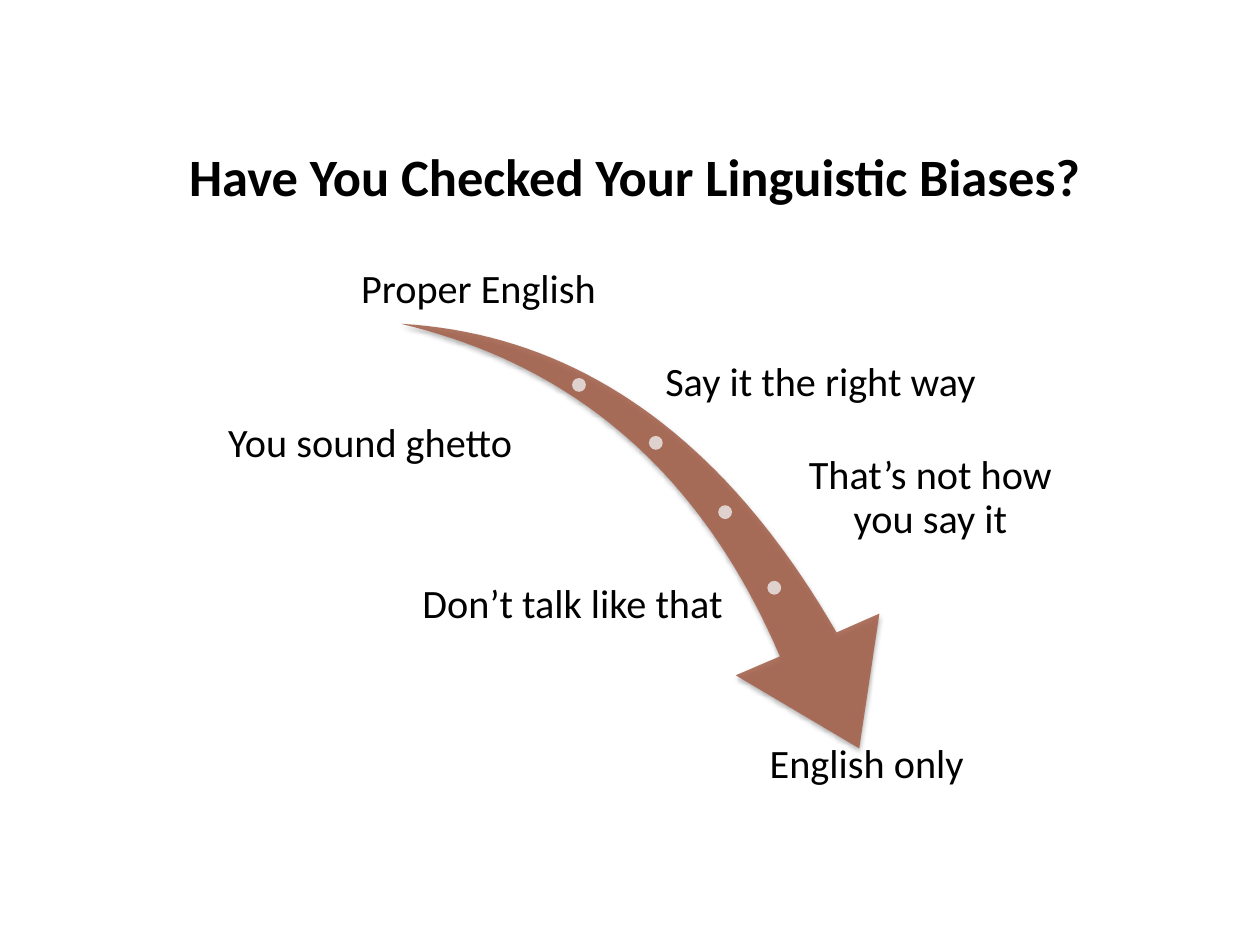
"""Build a slide with a curved arrow passing common remarks of linguistic bias."""
from lxml import etree
from pptx import Presentation, util as u
from pptx.dml.color import RGBColor
from pptx.enum import shapes, text
from pptx.oxml import ns, parse_xml

BLACK = RGBColor(0x00, 0x00, 0x00)
CLAY = RGBColor(0xA5, 0x63, 0x4D)
PALE = RGBColor(0xDF, 0xD1, 0xCE)
FONT = "Calibri"

TITLE = "Have You Checked Your Linguistic Biases?"
LEFT, CENTER, RIGHT = text.PP_ALIGN.LEFT, text.PP_ALIGN.CENTER, text.PP_ALIGN.RIGHT
TOP, MIDDLE, BOTTOM = text.MSO_ANCHOR.TOP, text.MSO_ANCHOR.MIDDLE, text.MSO_ANCHOR.BOTTOM
LABEL_HEIGHT = 0.79
LABELS = [
    ("Proper English", 1.92, 1.72, 3.76, CENTER, BOTTOM),
    ("Say it the right way", 5.25, 2.65, 2.99, LEFT, MIDDLE),
    ("You sound ghetto", 1.32, 3.13, 3.24, CENTER, MIDDLE),
    ("That’s not how you say it", 6.38, 3.56, 2.01, CENTER, MIDDLE),
    ("Don’t talk like that", 2.78, 4.41, 2.99, RIGHT, MIDDLE),
    ("English only", 5.52, 5.87, 2.72, CENTER, TOP),
]
DOT_SIZE = 0.11
DOTS = [(4.54, 3), (5.15, 3.46), (5.7, 4.01), (6.09, 4.61)]
OUTER_CURVE = [(3.18, 2.57), (4.58, 2.65), (5.74, 3.46), (6.64, 5.02)]
ARROWHEAD = [(6.98, 4.87), (6.82, 5.94), (5.84, 5.36)]
INNER_CURVE = [(6.19, 5.21), (5.58, 3.78), (4.58, 2.9), (3.18, 2.57)]
CURVE_STEPS = 40
SHADOW = (
    f'<a:effectLst {ns.nsdecls("a")}>'
    f'<a:outerShdw blurRad="{u.Pt(3.1)}" dist="{u.Pt(1.8)}" dir="5400000" rotWithShape="0">'
    '<a:srgbClr val="000000"><a:alpha val="35000"/></a:srgbClr>'
    '</a:outerShdw></a:effectLst>'
)


def curve_points(controls):
    """Return points along a cubic Bezier curve."""
    points = []
    for step in range(CURVE_STEPS + 1):
        t = step / CURVE_STEPS
        weights = ((1 - t) ** 3, 3 * t * (1 - t) ** 2, 3 * t ** 2 * (1 - t), t ** 3)
        points.append(tuple(sum(w * c for w, c in zip(weights, axis)) for axis in zip(*controls)))
    return points


def paint(shape, color):
    """Give a shape a plain fill without line or shadow."""
    shape.shadow.inherit = False
    shape.fill.solid()
    shape.fill.fore_color.rgb = color
    shape.line.fill.background()


def add_arrow(slide):
    """Draw the curved arrow with its soft shadow."""
    outline = curve_points(OUTER_CURVE) + ARROWHEAD + curve_points(INNER_CURVE)
    points = [(u.Inches(x), u.Inches(y)) for x, y in outline]
    builder = slide.shapes.build_freeform(*points[0])
    builder.add_line_segments(points[1:], close=True)
    arrow = builder.convert_to_shape()
    paint(arrow, CLAY)
    properties = arrow.element.spPr
    color = properties.find(ns.qn("a:solidFill")).find(ns.qn("a:srgbClr"))
    etree.SubElement(color, ns.qn("a:alpha")).set("val", "89000")
    properties.replace(properties.find(ns.qn("a:effectLst")), parse_xml(SHADOW))


def set_text(shape, words, size, align, anchor, bold=False):
    """Write one formatted paragraph into a shape."""
    frame = shape.text_frame
    frame.word_wrap = True
    frame.auto_size = text.MSO_AUTO_SIZE.NONE
    frame.vertical_anchor = anchor
    paragraph = frame.paragraphs[0]
    paragraph.text = words
    paragraph.alignment = align
    font = paragraph.font
    font.name, font.size, font.bold = FONT, u.Pt(size), bold
    font.color.rgb = BLACK
    return frame


def main():
    presentation = Presentation()
    presentation.slide_width, presentation.slide_height = u.Inches(10), u.Inches(7.5)
    slide = presentation.slides.add_slide(presentation.slide_layouts[5])

    title = slide.shapes.title
    title.left, title.top = u.Inches(0.08), u.Inches(1.09)
    title.width, title.height = u.Inches(9.92), u.Inches(0.61)
    set_text(title, TITLE, 30, CENTER, TOP, bold=True)

    add_arrow(slide)
    for left, top in DOTS:
        dot = slide.shapes.add_shape(
            shapes.MSO_SHAPE.OVAL, *map(u.Inches, (left, top, DOT_SIZE, DOT_SIZE)))
        paint(dot, PALE)
    for words, left, top, width, align, anchor in LABELS:
        label = slide.shapes.add_textbox(*map(u.Inches, (left, top, width, LABEL_HEIGHT)))
        frame = set_text(label, words, 23, align, anchor)
        frame.margin_left = frame.margin_right = u.Inches(0.03)
        frame.margin_top = frame.margin_bottom = u.Inches(0.03)
        frame.paragraphs[0].line_spacing = 0.9

    presentation.save("out.pptx")


if __name__ == "__main__":
    main()
